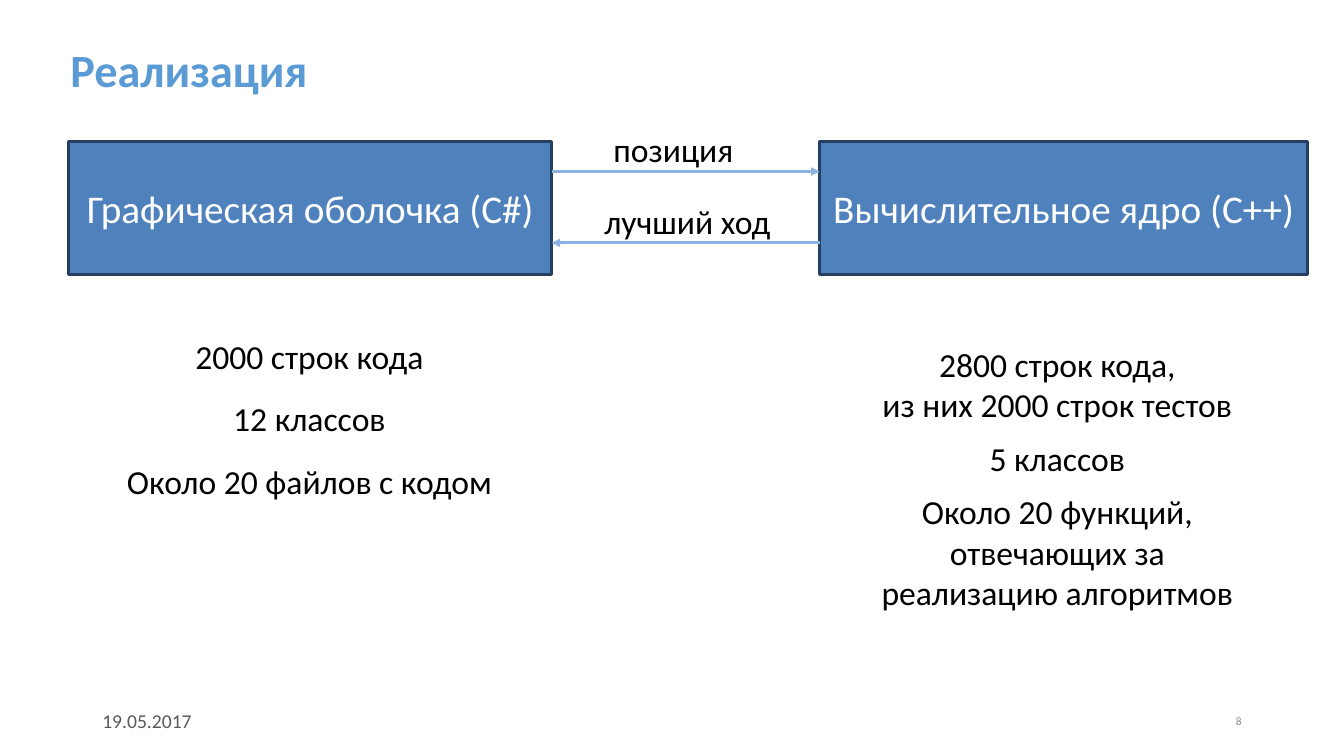
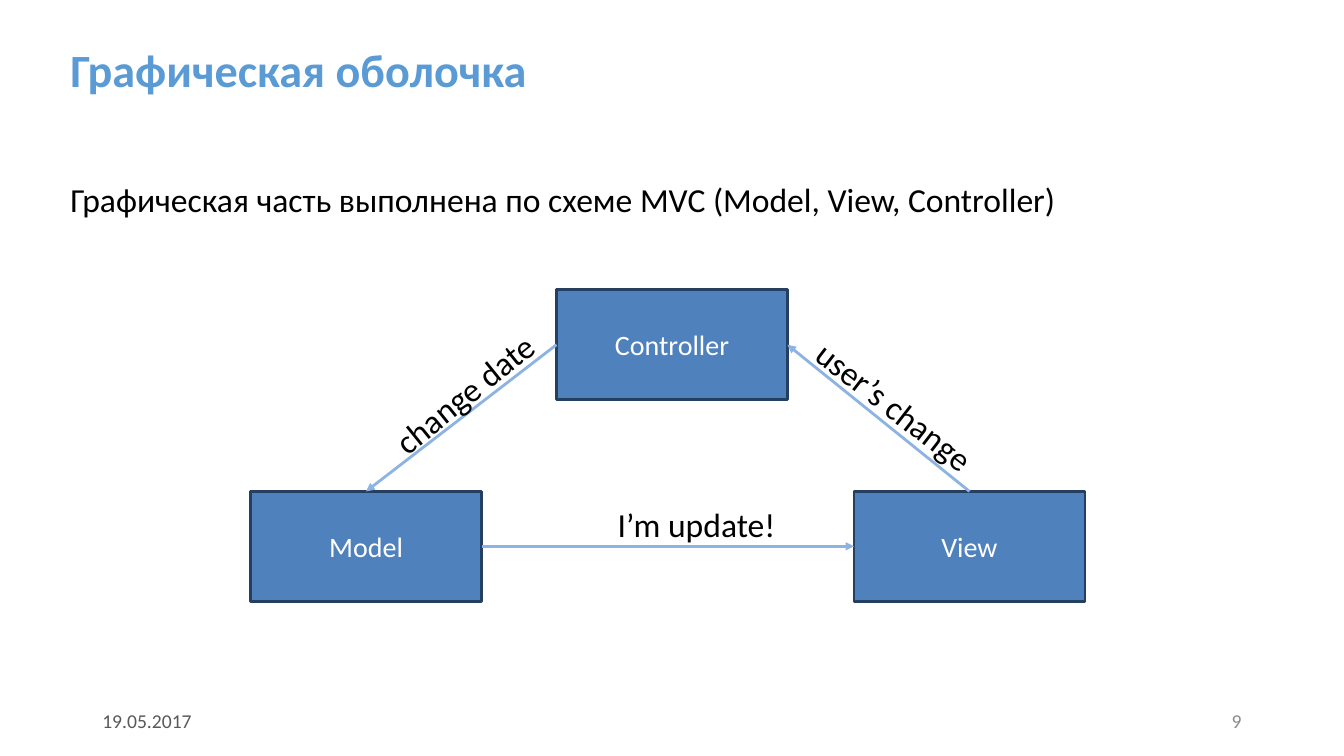
from lxml import etree
from pptx import Presentation
from pptx import util as u
from pptx.dml import color
from pptx.enum import shapes, text
from pptx.oxml import ns

FONT = "Calibri"
COLORS = {
    "title": "5B9BD5",
    "box": "4F81BD",
    "border": "243F60",
    "arrow": "8DB3E2",
    "text": "000000",
    "light": "FFFFFF",
    "date": "595959",
    "number": "8C8C8C",
}
ALIGN = text.PP_ALIGN
ANCHOR = text.MSO_ANCHOR
TOP, LEFT, RIGHT = 0, 1, 3


def rgb(name):
    """Return the palette colour with the given name."""
    return color.RGBColor.from_string(COLORS[name])


def place(shape, left, top, width, height):
    """Move and size a shape, in points."""
    shape.left, shape.top = u.Pt(left), u.Pt(top)
    shape.width, shape.height = u.Pt(width), u.Pt(height)


def format_text(shape, size, color_name, align, anchor=ANCHOR.MIDDLE, bold=False):
    """Format all text of a shape in one style."""
    frame = shape.text_frame
    frame.word_wrap = True
    frame.auto_size = text.MSO_AUTO_SIZE.NONE
    frame.vertical_anchor = anchor
    for paragraph in frame.paragraphs:
        paragraph.alignment = align
        for run in paragraph.runs:
            run.font.name = FONT
            run.font.size = u.Pt(size)
            run.font.bold = bold
            run.font.color.rgb = rgb(color_name)


def add_text(slide, content, bounds, size, color_name, align):
    """Add a one-line text box."""
    shape = slide.shapes.add_textbox(*map(u.Pt, bounds))
    shape.text_frame.text = content
    format_text(shape, size, color_name, align)
    return shape


def add_label(slide, content, center_x, center_y, rotation=0):
    """Add an arrow label centred on a point."""
    width, height = 190, 36
    bounds = (center_x - width / 2, center_y - height / 2, width, height)
    shape = add_text(slide, content, bounds, 24, "text", ALIGN.CENTER)
    shape.rotation = rotation


def add_box(slide, content, bounds, size):
    """Add a bordered process box with centred text."""
    shape = slide.shapes.add_shape(
        shapes.MSO_SHAPE.FLOWCHART_PROCESS, *map(u.Pt, bounds))
    shape.shadow.inherit = False
    shape.fill.solid()
    shape.fill.fore_color.rgb = rgb("box")
    shape.line.color.rgb = rgb("border")
    shape.line.width = u.Pt(2)
    shape.text_frame.text = content
    format_text(shape, size, "light", ALIGN.CENTER)
    return shape


def add_arrow(slide, start=(0, 0), end=(0, 0)):
    """Add a straight arrow without a shadow."""
    connector = slide.shapes.add_connector(
        shapes.MSO_CONNECTOR.STRAIGHT, *map(u.Pt, (*start, *end)))
    connector.line.color.rgb = rgb("arrow")
    connector.line.width = u.Pt(2)
    properties = connector.element.spPr
    line = properties.find(ns.qn("a:ln"))
    etree.SubElement(line, ns.qn("a:tailEnd"), type="triangle")
    etree.SubElement(properties, ns.qn("a:effectLst"))
    return connector


def join_boxes(slide, source, source_side, target, target_side):
    """Add an arrow glued to the sides of two boxes."""
    connector = add_arrow(slide)
    connector.begin_connect(source, source_side)
    connector.end_connect(target, target_side)


def fill_body(placeholder, items, bounds, align, gap=0):
    """Fill a body placeholder with unbulleted paragraphs."""
    place(placeholder, *bounds)
    frame = placeholder.text_frame
    for index, item in enumerate(items):
        paragraph = frame.add_paragraph() if index else frame.paragraphs[0]
        paragraph.text = item
        properties = paragraph._p.get_or_add_pPr()
        properties.set("marL", "0")
        properties.set("indent", "0")
        etree.SubElement(properties, ns.qn("a:buNone"))
        paragraph.space_before = u.Pt(gap if index else 0)
    format_text(placeholder, 24, "text", align, ANCHOR.TOP)


def add_page(presentation, layout, title, number, number_size):
    """Add a slide with the shared title, date and page number."""
    slide = presentation.slides.add_slide(presentation.slide_layouts[layout])
    heading = slide.shapes.title
    place(heading, 43, 9.5, 675, 85)
    heading.text_frame.text = title
    format_text(heading, 33, "title", ALIGN.LEFT, bold=True)
    heading.text_frame.paragraphs[0].line_spacing = 0.9
    add_text(slide, "19.05.2017", (66, 500.5, 216, 29), 14, "date", ALIGN.LEFT)
    add_text(slide, number, (678, 500.5, 216, 29), number_size, "number", ALIGN.RIGHT)
    return slide


def build_implementation(presentation):
    """Build the slide on the two program parts."""
    slide = add_page(presentation, 3, "Реализация", "8", 8.2)
    shell_right, core_left = 394, 585.5
    add_box(slide, "Графическая оболочка (C#)", (49, 101, 345, 95), 28)
    add_box(slide, "Вычислительное ядро (C++)", (core_left, 101, 348.5, 95), 28)
    add_arrow(slide, (shell_right, 122.5), (core_left, 122.5))
    add_arrow(slide, (core_left, 173.5), (shell_right, 173.5))
    add_label(slide, "позиция", 481, 106.5)
    add_label(slide, "лучший ход", 491, 158)
    fill_body(
        slide.placeholders[1],
        ["2000 строк кода", "12 классов", "Около 20 файлов с кодом"],
        (47, 236, 348, 130), ALIGN.CENTER, 16)
    fill_body(
        slide.placeholders[2],
        ["2800 строк кода,\vиз них 2000 строк тестов",
         "5 классов",
         "Около 20 функций, отвечающих за реализацию алгоритмов"],
        (609, 242, 292.5, 202), ALIGN.CENTER, 9.5)


def build_shell(presentation):
    """Build the slide on the Model, View, Controller scheme."""
    slide = add_page(presentation, 1, "Графическая оболочка", "9", 14)
    fill_body(
        slide.placeholders[1],
        ["Графическая часть выполнена по схеме MVC (Model, View, Controller)"],
        (43, 124, 740, 36), ALIGN.LEFT)
    positions = {"Model": (179, 351), "View": (610, 351), "Controller": (397.5, 207)}
    boxes = {
        name: add_box(slide, name, (*corner, 165, 78.5), 20)
        for name, corner in positions.items()
    }
    join_boxes(slide, boxes["Model"], RIGHT, boxes["View"], LEFT)
    join_boxes(slide, boxes["View"], TOP, boxes["Controller"], RIGHT)
    join_boxes(slide, boxes["Controller"], LEFT, boxes["Model"], TOP)
    add_label(slide, "I’m update!", 497.5, 374)
    add_label(slide, "user’s change", 639, 290, 37.8)
    add_label(slide, "change date", 331.5, 281, -38.9)


def main():
    """Build and save the presentation."""
    presentation = Presentation()
    presentation.slide_width, presentation.slide_height = u.Pt(960), u.Pt(540)
    build_implementation(presentation)
    build_shell(presentation)
    presentation.save("out.pptx")


if __name__ == "__main__":
    main()
